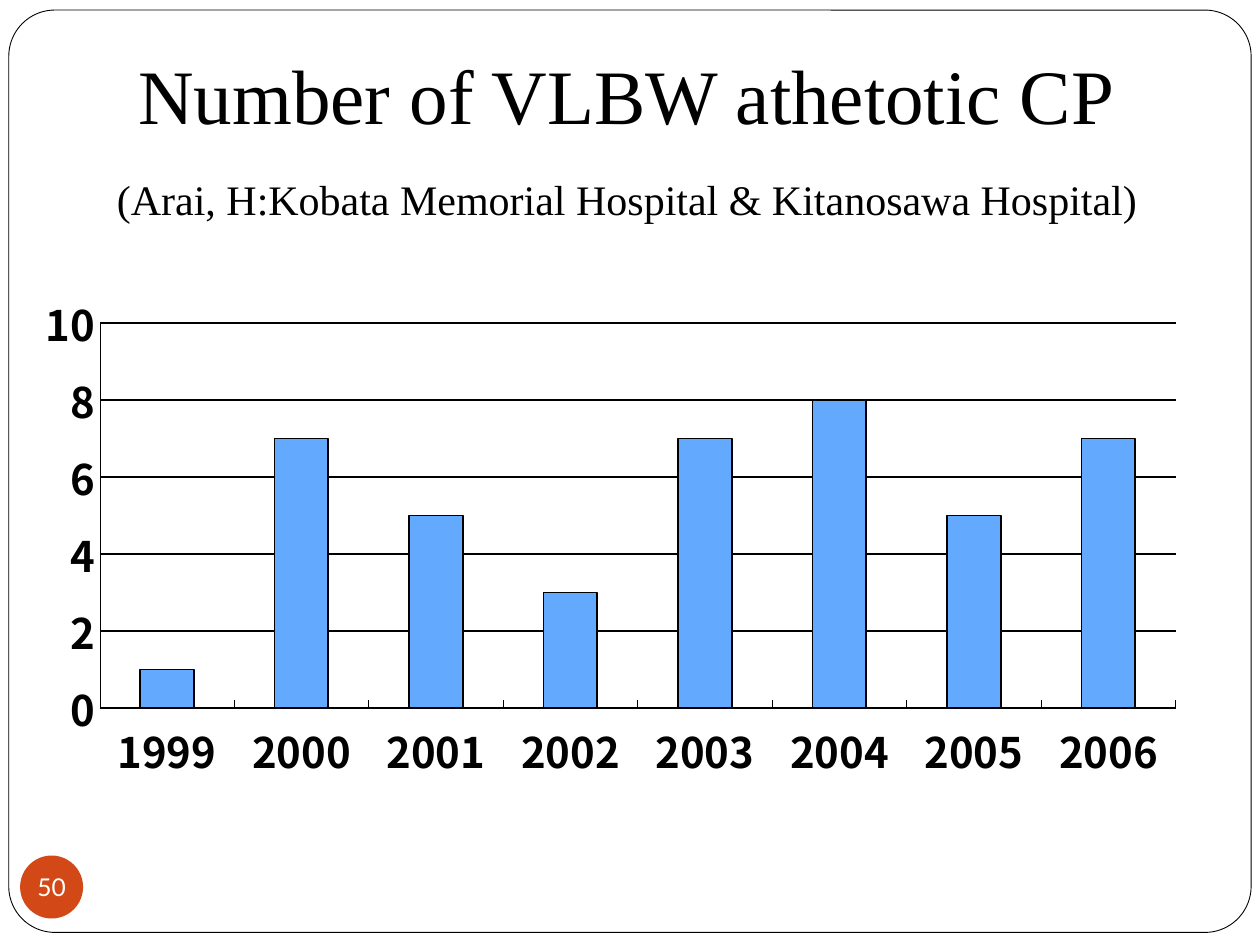
import dataclasses

import lxml.etree
import pptx
import pptx.chart.data
import pptx.dml.color
import pptx.enum.chart
import pptx.enum.shapes
import pptx.enum.text
import pptx.oxml.ns
import pptx.util

Inches, Pt = pptx.util.Inches, pptx.util.Pt
RGB = pptx.dml.color.RGBColor.from_string
qn = pptx.oxml.ns.qn
SHAPE = pptx.enum.shapes.MSO_SHAPE
ALIGN = pptx.enum.text.PP_ALIGN
ANCHOR = pptx.enum.text.MSO_ANCHOR


@dataclasses.dataclass(frozen=True)
class Theme:
    ink: str = "000000"
    paper: str = "FFFFFF"
    bar: str = "63AAFE"
    badge: str = "D34817"
    serif: str = "Times New Roman"
    sans: str = "Lato"
    chart_font: str = "Noto Sans CJK JP"
    title_size: int = 44
    body_size: int = 24
    number_size: int = 14


def write(tf, text, *, size, font, color, align=ALIGN.LEFT,
          anchor=ANCHOR.TOP, wrap=True, margin=None):
    tf.word_wrap = wrap
    tf.vertical_anchor = anchor
    if margin is not None:
        tf.margin_left = tf.margin_right = margin
        tf.margin_top = tf.margin_bottom = margin
    p = tf.paragraphs[0]
    p.alignment = align
    r = p.add_run()
    r.text = text
    r.font.size, r.font.name = Pt(size), font
    r.font.color.rgb = RGB(color)


def set_line(line, color, width):
    line.color.rgb = RGB(color)
    line.width = Pt(width)


def set_plot_area(chart, **fractions):
    """Fix the inner plot area as fractions (x, y, w, h) of the chart."""
    area = chart.element.find(".//" + qn("c:plotArea"))
    for old in area.findall(qn("c:layout")):
        area.remove(old)
    layout = lxml.etree.Element(qn("c:layout"))
    area.insert(0, layout)
    manual = lxml.etree.SubElement(layout, qn("c:manualLayout"))
    settings = {"layoutTarget": "inner", "xMode": "edge", "yMode": "edge", **fractions}
    for name, value in settings.items():
        lxml.etree.SubElement(manual, qn("c:" + name)).set("val", str(value))


class SlideBuilder:
    def __init__(self, slide, theme):
        self.s, self.theme = slide, theme

    def shape(self, kind, box, fill):
        sp = self.s.shapes.add_shape(kind, *map(Inches, box))
        sp.shadow.inherit = False
        sp.fill.solid()
        sp.fill.fore_color.rgb = RGB(fill)
        sp.line.fill.background()
        return sp

    def frame(self, box):
        """Add the rounded page border behind everything else."""
        sp = self.shape(SHAPE.ROUNDED_RECTANGLE, box, self.theme.paper)
        sp.adjustments[0] = 0.05
        set_line(sp.line, self.theme.ink, 0.5)
        sp.element.getparent().insert(2, sp.element)

    def title(self, text, box):
        t, sp = self.theme, self.s.shapes.title
        sp.left, sp.top, sp.width, sp.height = map(Inches, box)
        write(sp.text_frame, text, size=t.title_size, font=t.serif,
              color=t.ink, align=ALIGN.CENTER, anchor=ANCHOR.BOTTOM)

    def caption(self, text, box):
        t, sp = self.theme, self.s.shapes.add_textbox(*map(Inches, box))
        write(sp.text_frame, text, size=t.body_size, font=t.serif, color=t.ink)

    def page_number(self, text, box):
        t, sp = self.theme, self.shape(SHAPE.OVAL, box, self.theme.badge)
        write(sp.text_frame, text, size=t.number_size, font=t.sans, color=t.paper,
              align=ALIGN.CENTER, anchor=ANCHOR.MIDDLE, wrap=False, margin=0)

    def column_chart(self, counts, box):
        t, xl = self.theme, pptx.enum.chart
        data = pptx.chart.data.CategoryChartData()
        data.categories = [str(year) for year in counts]
        data.add_series("Series 1", list(counts.values()))
        chart = self.s.shapes.add_chart(
            xl.XL_CHART_TYPE.COLUMN_CLUSTERED, *map(Inches, box), data).chart
        chart.has_legend = chart.has_title = False
        chart.font.size, chart.font.name = Pt(t.body_size), t.chart_font
        chart.font.bold = True
        chart.font.color.rgb = RGB(t.ink)

        plot = chart.plots[0]
        plot.vary_by_categories = False
        plot.gap_width = 150
        bars = plot.series[0].format
        bars.fill.solid()
        bars.fill.fore_color.rgb = RGB(t.bar)
        set_line(bars.line, t.ink, 1)

        for axis in (chart.category_axis, chart.value_axis):
            axis.major_tick_mark = xl.XL_TICK_MARK.INSIDE
            axis.minor_tick_mark = xl.XL_TICK_MARK.NONE
            set_line(axis.format.line, t.ink, 0.25)
        chart.category_axis.tick_label_position = xl.XL_TICK_LABEL_POSITION.LOW
        values = chart.value_axis
        values.minimum_scale, values.maximum_scale, values.major_unit = 0, 10, 2
        values.has_major_gridlines = True
        set_line(values.major_gridlines.format.line, t.ink, 1)
        set_plot_area(chart, x=0.044, y=0.101, w=0.929, h=0.679)


def main():
    prs = pptx.Presentation()
    prs.slide_width, prs.slide_height = Inches(10), Inches(7.5)
    s = SlideBuilder(prs.slides.add_slide(prs.slide_layouts[5]), Theme())
    s.frame((0.07, 0.08, 9.86, 7.32))
    s.title("Number of VLBW athetotic CP", (0.25, 0.33, 9.45, 0.83))
    patients = dict(zip(range(1999, 2007), (1, 7, 5, 3, 7, 8, 5, 7)))
    s.column_chart(patients, (0.36, 2.11, 9.22, 4.5))
    s.caption("(Arai, H:Kobata Memorial Hospital & Kitanosawa Hospital)",
              (0.83, 1.33, 8.46, 0.5))
    s.page_number("50", (0.16, 6.79, 0.5, 0.5))
    prs.save("out.pptx")


if __name__ == "__main__":
    main()
